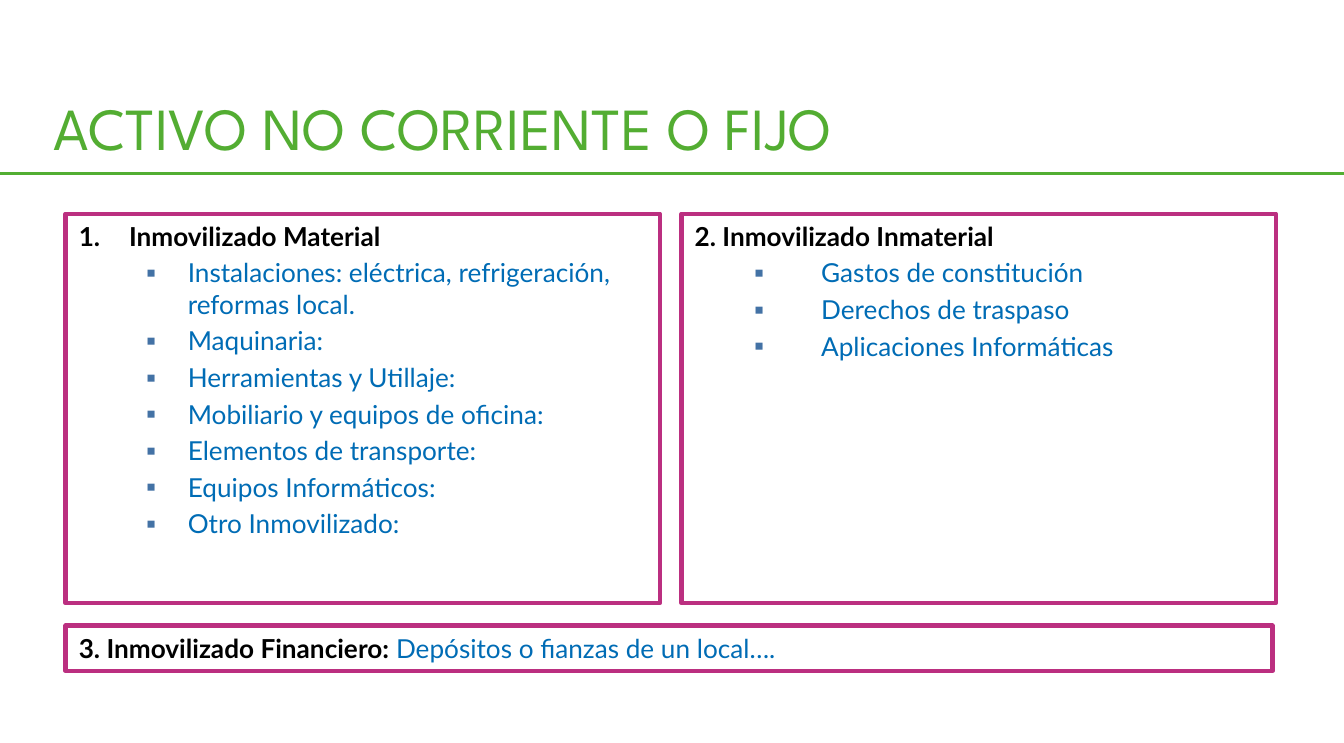
"""Build the slide on fixed assets with its three framed groups."""
from lxml import etree
from pptx import Presentation
from pptx import util as u
from pptx.dml.color import RGBColor
from pptx.enum import shapes, text
from pptx.oxml import ns

GREEN = RGBColor(0x53, 0xAD, 0x32)
RULE = RGBColor(0x52, 0xAE, 0x32)
PINK = RGBColor(0xBB, 0x2F, 0x80)
BLUE = RGBColor(0x00, 0x6C, 0xB5)
STEEL = RGBColor(0x43, 0x72, 0xA5)
BLACK = RGBColor(0, 0, 0)


def add_run(par, words, color, bold=False, size=14, face="Lato"):
    run = par.add_run()
    run.text = words
    font = run.font
    font.name, font.size, font.bold = face, u.Pt(size), bold
    font.color.rgb = color


def set_mark(par, left, hang, color, kind, **attrs):
    props = par._p.get_or_add_pPr()
    props.set("marL", str(u.Cm(left)))
    props.set("indent", str(-u.Cm(hang)))
    tint = etree.SubElement(props, ns.qn("a:buClr"))
    etree.SubElement(tint, ns.qn("a:srgbClr"), val=str(color))
    etree.SubElement(props, ns.qn("a:buFont"), typeface="Lato")
    etree.SubElement(props, ns.qn(kind), **attrs)


prs = Presentation()
prs.slide_width, prs.slide_height = u.Cm(25.4), u.Cm(14.05)
slide = prs.slides.add_slide(prs.slide_layouts[6])

assets = [
    "Instalaciones: eléctrica, refrigeración, reformas local.",
    "Maquinaria:",
    "Herramientas y Utillaje:",
    "Mobiliario y equipos de oficina:",
    "Elementos de transporte:",
    "Equipos Informáticos:",
    "Otro Inmovilizado:",
]
rights = ["Gastos de constitución", "Derechos de traspaso", "Aplicaciones Informáticas"]
top = text.MSO_ANCHOR.TOP
mid = text.MSO_ANCHOR.MIDDLE
panels = [
    (1.24, 4.04, 11.23, 7.37, top, "Inmovilizado Material", assets, 2.06, 0.79),
    (12.88, 4.04, 11.23, 7.37, top, "2. Inmovilizado Inmaterial", rights, 2.39, 1.27),
    (1.24, 11.83, 22.81, 0.86, mid, "3. Inmovilizado Financiero: ", [], 0, 0),
]

for x, y, wide, high, anchor, head, items, left, hang in panels:
    box = slide.shapes.add_shape(
        shapes.MSO_SHAPE.RECTANGLE, u.Cm(x), u.Cm(y), u.Cm(wide), u.Cm(high))
    box.shadow.inherit = False
    box.fill.background()
    box.line.color.rgb = PINK
    box.line.width = u.Pt(2.25)
    frame = box.text_frame
    frame.word_wrap = True
    frame.vertical_anchor = anchor
    par = frame.paragraphs[0]
    par.alignment = text.PP_ALIGN.LEFT
    add_run(par, head, BLACK, True)
    if not items:
        add_run(par, "Depósitos o fianzas de un local….", BLUE)
        continue
    par.space_before = u.Pt(2.8)
    if items is assets:
        set_mark(par, 0.95, 0.95, BLACK, "a:buAutoNum", type="arabicPeriod")
    for item in items:
        par = frame.add_paragraph()
        par.level = 1
        par.alignment = text.PP_ALIGN.LEFT
        par.space_before = u.Pt(2.8)
        set_mark(par, left, hang, STEEL, "a:buChar", char="▪")
        add_run(par, item, BLUE)

title = slide.shapes.add_textbox(u.Cm(0.76), u.Cm(1.6), u.Cm(23.24), u.Cm(1.63))
title.text_frame.word_wrap = True
add_run(title.text_frame.paragraphs[0], "ACTIVO NO CORRIENTE O FIJO",
        GREEN, size=32, face="League Spartan")

rule = slide.shapes.add_connector(
    shapes.MSO_CONNECTOR.STRAIGHT, 0, u.Cm(3.28), u.Cm(25.4), u.Cm(3.28))
rule.line.color.rgb = RULE
rule.line.width = u.Pt(2)
etree.SubElement(rule._element.spPr, ns.qn("a:effectLst"))

prs.save("out.pptx")
